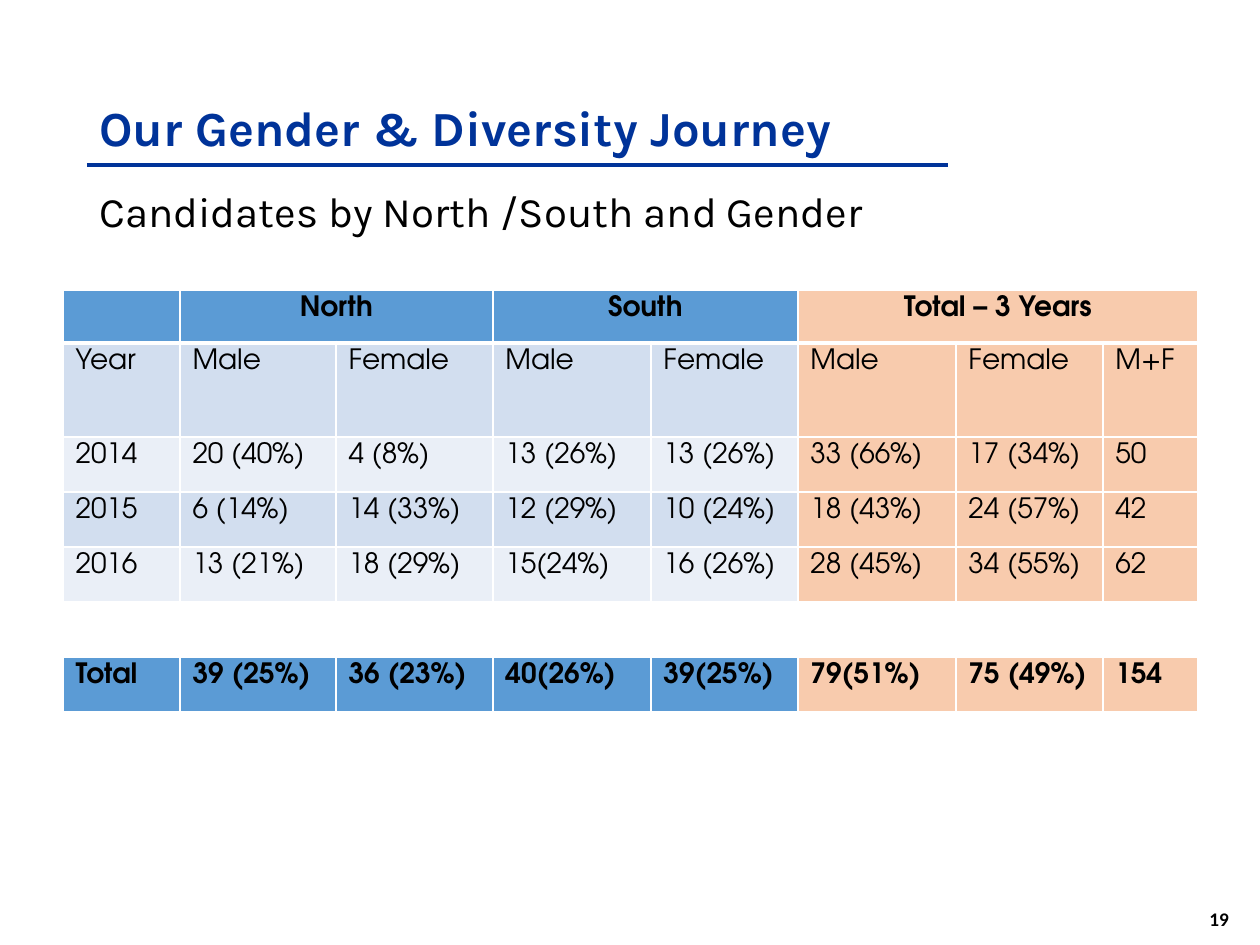
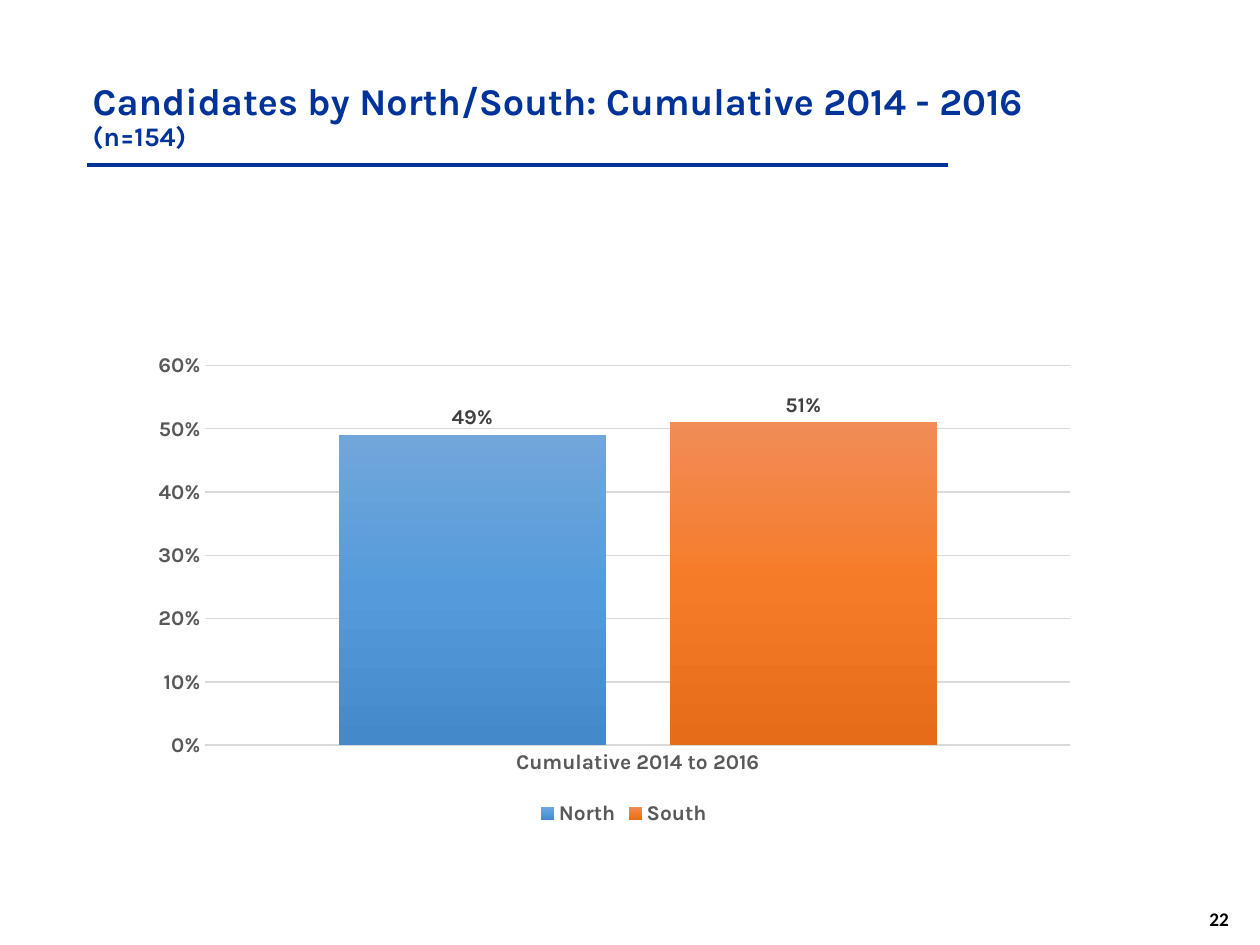
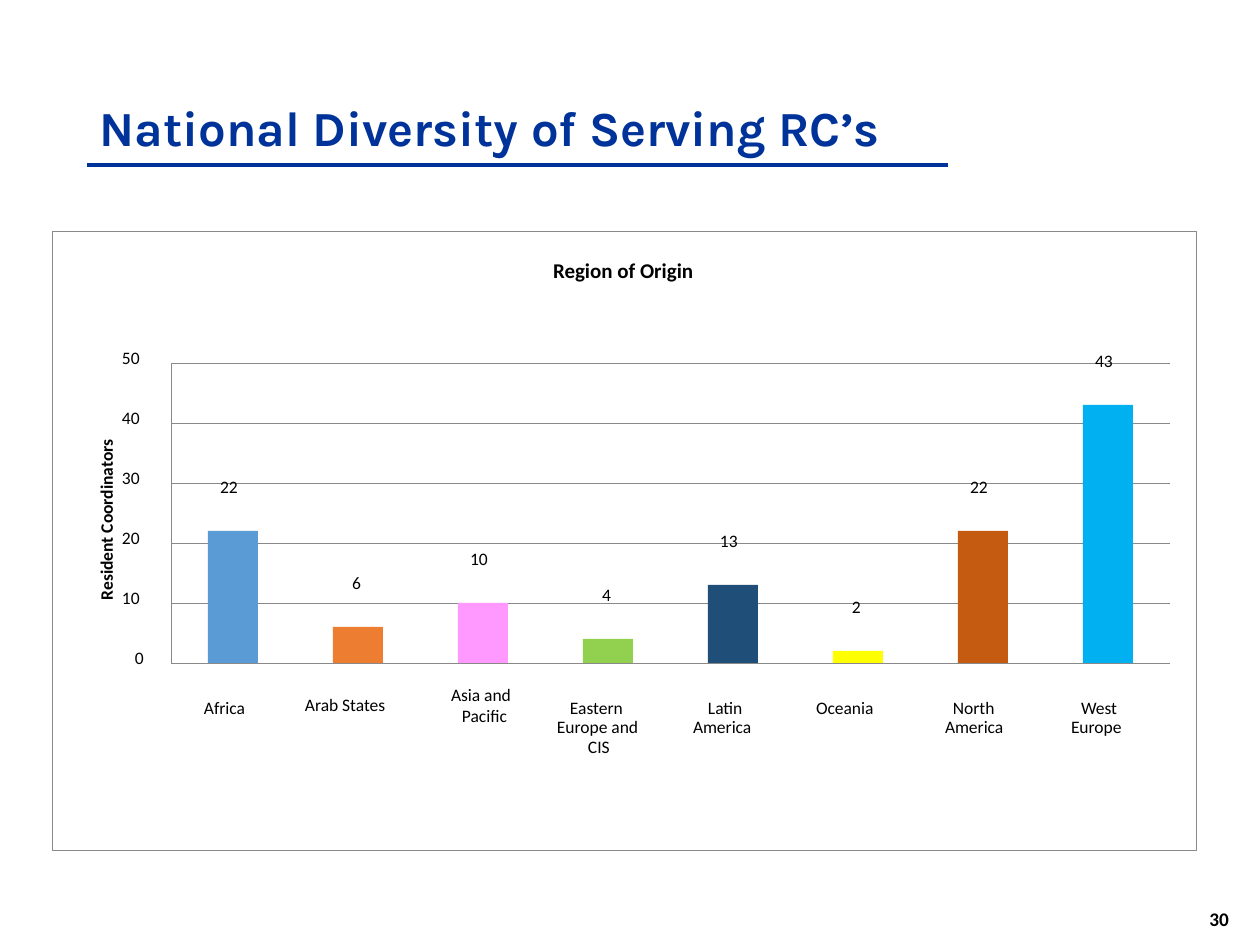
from lxml import etree
from pptx import Presentation
from pptx.chart.data import CategoryChartData
from pptx.dml.color import RGBColor
from pptx.enum.chart import XL_CHART_TYPE, XL_LABEL_POSITION, XL_LEGEND_POSITION, XL_TICK_MARK
from pptx.enum.shapes import MSO_CONNECTOR, MSO_SHAPE
from pptx.enum.text import MSO_ANCHOR, MSO_AUTO_SIZE, PP_ALIGN
from pptx.oxml import parse_xml
from pptx.oxml.ns import nsdecls, qn
from pptx.util import Pt

COLUMNS = XL_CHART_TYPE.COLUMN_CLUSTERED
OUTSIDE = XL_LABEL_POSITION.OUTSIDE_END
LEGEND_BOTTOM = XL_LEGEND_POSITION.BOTTOM
NO_TICK = XL_TICK_MARK.NONE
STRAIGHT, RECTANGLE = MSO_CONNECTOR.STRAIGHT, MSO_SHAPE.RECTANGLE
LEFT, CENTER = PP_ALIGN.LEFT, PP_ALIGN.CENTER
TOP, MIDDLE, BOTTOM = MSO_ANCHOR.TOP, MSO_ANCHOR.MIDDLE, MSO_ANCHOR.BOTTOM

PX_PER_INCH = 126
HEADING, TABLE_FONT, PLAIN = "Karla", "TeX Gyre Adventor", "Calibri"
COLORS = {
    "ink": "000000", "navy": "003399", "white": "FFFFFF",
    "blue": "5B9BD5", "band": "D2DEEF", "pale": "EAEFF7", "peach": "F8CBAD",
    "grid": "D9D9D9", "axis_text": "595959", "label": "404040", "gray": "898989",
    "orange": "ED7D31", "pink": "FF99FF", "green": "92D050", "dark_blue": "1F4E79",
    "yellow": "FFFF00", "rust": "C55A11", "sky": "00B0F0",
}
GRADIENTS = {"North": ("71A6DB", "559BDB", "448ACA"),
             "South": ("F18C57", "F67B28", "E56C19")}

# Candidate table
COLUMN_WIDTHS = [117, 156, 157, 158, 147, 158, 147, 95]
ROW_HEIGHTS = [53, 94] + [55] * 5
FIRST_TOTAL_COLUMN = 5
HEADER_GROUPS = [("North", 1, 2), ("South", 3, 4), ("Total – 3 Years", 5, 7)]
TABLE_ROWS = [
    ("blue", []),
    ("band", ["Year", "Male", "Female", "Male", "Female", "Male", "Female", "M+F"]),
    ("pale", ["2014", "20 (40%)", "4 (8%)", "13 (26%)", "13 (26%)",
              "33 (66%)", "17 (34%)", "50"]),
    ("band", ["2015", "6 (14%)", "14 (33%)", "12 (29%)", "10 (24%)",
              "18 (43%)", "24 (57%)", "42"]),
    ("pale", ["2016", "13 (21%)", "18 (29%)", "15(24%)", "16 (26%)",
              "28 (45%)", "34 (55%)", "62"]),
    ("white", []),
    ("blue", ["Total", "39 (25%)", "36 (23%)", "40(26%)", "39(25%)",
              "79(51%)", "75 (49%)", "154"]),
]
GAP_ROW = 5

# Region columns: coordinators, bar colour, name lines with their left and top
AXIS_LEFT, AXIS_RIGHT, BASELINE = 171, 1170, 663
UNIT, BAR_LEFT, BAR_STEP, BAR_WIDTH = 6, 208, 125, 50
LINE_1, LINE_2, LINE_3 = 696, 715, 735
REGIONS = [
    (22, "blue", [("Africa", 204, LINE_1)]),
    (6, "orange", [("Arab States", 305, 693)]),
    (10, "pink", [("Asia and", 451, 683), ("Pacific", 462, 704)]),
    (4, "green", [("Eastern", 570, LINE_1), ("Europe and", 557, LINE_2),
                  ("CIS", 588, LINE_3)]),
    (13, "dark_blue", [("Latin", 708, LINE_1), ("America", 693, LINE_2)]),
    (2, "yellow", [("Oceania", 816, LINE_1)]),
    (22, "rust", [("North", 953, LINE_1), ("America", 945, LINE_2)]),
    (43, "sky", [("West", 1081, LINE_1), ("Europe", 1071, LINE_2)]),
]


def px(length):
    return round(length * 914400 / PX_PER_INCH)


def rgb(name):
    return RGBColor.from_string(COLORS[name])


def style_font(font, name, size, color="ink", bold=False):
    font.name, font.size, font.bold = name, Pt(size), bold
    font.color.rgb = rgb(color)


def write(frame, text, font=HEADING, size=16, color="ink", bold=False,
          align=LEFT, spacing=None, small=None):
    """Write one paragraph; lines after the first take the small size."""
    para = frame.paragraphs[0]
    para.alignment = align
    if spacing:
        para.line_spacing = spacing
    for index, line in enumerate(text.split("\n")):
        if index:
            para.add_line_break()
        span = para.add_run()
        span.text = line
        style_font(span.font, font, small if index and small else size, color, bold)


def add_text(page, area, text, anchor=TOP, wrap=True, **style):
    box = page.shapes.add_textbox(*map(px, area))
    box.text_frame.word_wrap = wrap
    box.text_frame.vertical_anchor = anchor
    write(box.text_frame, text, **style)
    return box


def add_line(page, x1, y1, x2, y2, color, width):
    line = page.shapes.add_connector(STRAIGHT, px(x1), px(y1), px(x2), px(y2))
    line.line.color.rgb, line.line.width = rgb(color), Pt(width)
    etree.SubElement(line.element.spPr, qn("a:effectLst"))


def add_page(deck, title, number, area=(87, 51, 1086, 112), size=28, small=None):
    """Add a slide with its title, rule and page number."""
    page = deck.slides.add_slide(deck.slide_layouts[5])
    heading = page.shapes.title
    heading.left, heading.top, heading.width, heading.height = map(px, area)
    frame = heading.text_frame
    frame.word_wrap = True
    frame.auto_size = MSO_AUTO_SIZE.NONE
    frame.vertical_anchor = BOTTOM
    write(frame, title, size=size, color="navy", bold=True, spacing=0.9, small=small)
    add_line(page, 87, 165, 948, 165, "navy", 2)
    add_text(page, (1197, 901, 48, 37), number, wrap=False,
             font=PLAIN, size=11, bold=True)
    return page


# Table parts
def border_cell(cell, top=1, bottom=1):
    properties = cell._tc.get_or_add_tcPr()
    widths = {"lnL": 1, "lnR": 1, "lnT": top, "lnB": bottom}
    for index, (tag, width) in enumerate(widths.items()):
        properties.insert(index, parse_xml(
            f'<a:{tag} {nsdecls("a")} w="{Pt(width)}"><a:solidFill>'
            f'<a:srgbClr val="{COLORS["white"]}"/></a:solidFill></a:{tag}>'))


def add_candidate_table(page):
    table = page.shapes.add_table(len(ROW_HEIGHTS), len(COLUMN_WIDTHS), px(63), px(290),
                                  px(sum(COLUMN_WIDTHS)), px(sum(ROW_HEIGHTS))).table
    table.first_row = table.horz_banding = False
    for column, width in zip(table.columns, COLUMN_WIDTHS):
        column.width = px(width)
    for row, height in zip(table.rows, ROW_HEIGHTS):
        row.height = px(height)
    for row, (fill, texts) in enumerate(TABLE_ROWS):
        for column in range(len(COLUMN_WIDTHS)):
            cell = table.cell(row, column)
            in_total = column >= FIRST_TOTAL_COLUMN and row != GAP_ROW
            cell.fill.solid()
            cell.fill.fore_color.rgb = rgb("peach" if in_total else fill)
            border_cell(cell, top=3 if row == 1 else 1, bottom=3 if row == 0 else 1)
            if texts:
                write(cell.text_frame, texts[column], font=TABLE_FONT, bold=fill == "blue")
    for text, first, last in HEADER_GROUPS:
        table.cell(0, first).merge(table.cell(0, last))
        write(table.cell(0, first).text_frame, text, font=TABLE_FONT,
              bold=True, align=CENTER)
    table.cell(GAP_ROW, 0).merge(table.cell(GAP_ROW, len(COLUMN_WIDTHS) - 1))


# Share chart
def set_plot_layout(chart, **fractions):
    area = chart.element.find(".//" + qn("c:plotArea"))
    for old in area.findall(qn("c:layout")):
        area.remove(old)
    values = dict(layoutTarget="inner", xMode="edge", yMode="edge", **fractions)
    items = "".join(f'<c:{tag} val="{value}"/>' for tag, value in values.items())
    area.insert(0, parse_xml(f'<c:layout {nsdecls("c")}><c:manualLayout>{items}'
                             '</c:manualLayout></c:layout>'))


def fill_gradient(series, stops):
    series.format.fill.background()
    blank = series._element.spPr.find(qn("a:noFill"))
    items = "".join(f'<a:gs pos="{index * 50000}"><a:srgbClr val="{stop}"/></a:gs>'
                    for index, stop in enumerate(stops))
    blank.getparent().replace(blank, parse_xml(
        f'<a:gradFill {nsdecls("a")}><a:gsLst>{items}</a:gsLst>'
        '<a:lin ang="5400000" scaled="0"/></a:gradFill>'))


def add_share_chart(page):
    data = CategoryChartData(number_format="0%")
    data.categories = ["Cumulative 2014 to 2016"]
    data.add_series("North", [0.49])
    data.add_series("South", [0.51])
    chart = page.shapes.add_chart(COLUMNS, px(158), px(296), px(931), px(535), data).chart
    style_font(chart.font, HEADING, 10)
    chart.has_title = False
    chart.element.find(qn("c:chart")).addnext(parse_xml(
        f'<c:spPr {nsdecls("c", "a")}><a:noFill/><a:ln><a:noFill/></a:ln></c:spPr>'))
    set_plot_layout(chart, x=0.05, y=0.13, w=0.93, h=0.71)

    values, categories = chart.value_axis, chart.category_axis
    values.minimum_scale, values.maximum_scale, values.major_unit = 0, 0.6, 0.1
    values.tick_labels.number_format = "0%"
    values.tick_labels.number_format_is_linked = False
    values.format.line.fill.background()
    for line, width in ((values.major_gridlines.format.line, 0.75),
                        (categories.format.line, 1)):
        line.color.rgb, line.width = rgb("grid"), Pt(width)
    for axis in (values, categories):
        axis.major_tick_mark = axis.minor_tick_mark = NO_TICK
        style_font(axis.tick_labels.font, HEADING, 12, "axis_text", True)

    chart.has_legend = True
    chart.legend.position = LEGEND_BOTTOM
    chart.legend.include_in_layout = False
    style_font(chart.legend.font, HEADING, 12, "axis_text", True)

    plot = chart.plots[0]
    plot.gap_width, plot.overlap, plot.vary_by_categories = 100, -24, False
    for series in plot.series:
        fill_gradient(series, GRADIENTS[series.name])
        labels = series.data_labels
        labels.show_value, labels.position = True, OUTSIDE
        labels.number_format, labels.number_format_is_linked = "0%", False
        style_font(labels.font, HEADING, 12, "label", True)


# Region diagram
def add_block(page, area, fill=None, line=None):
    block = page.shapes.add_shape(RECTANGLE, *map(px, area))
    block.shadow.inherit = False
    if fill:
        block.fill.solid()
        block.fill.fore_color.rgb = rgb(fill)
    else:
        block.fill.background()
    if line:
        block.line.color.rgb, block.line.width = rgb(line), Pt(0.5)
    else:
        block.line.fill.background()


def add_label(page, text, left, top, width=120, height=52, size=10, bold=False):
    box = add_text(page, (left, top, width, height), text, font=PLAIN,
                   size=size, bold=bold, spacing=1.07)
    frame = box.text_frame
    frame.margin_left = frame.margin_top = frame.margin_right = frame.margin_bottom = 0
    return box


def add_number(page, number, left, top):
    """Label with a number; one digit stands half a number further right."""
    add_label(page, str(number), left + (7 if number < 10 else 0), top, width=34)


def add_region_diagram(page):
    for value in range(10, 51, 10):
        level = BASELINE - value * UNIT
        add_line(page, AXIS_LEFT, level, AXIS_RIGHT, level, "gray", 0.48)
    for index, (count, color, _) in enumerate(REGIONS):
        height = count * UNIT
        add_block(page, (BAR_LEFT + index * BAR_STEP, BASELINE - height, BAR_WIDTH, height),
                  fill=color)
    add_line(page, AXIS_LEFT, BASELINE, AXIS_LEFT, BASELINE - 50 * UNIT, "gray", 0.48)
    add_line(page, AXIS_LEFT, BASELINE, AXIS_RIGHT, BASELINE, "gray", 0.48)

    for index, (count, _, _) in enumerate(REGIONS):
        add_number(page, count, BAR_LEFT + index * BAR_STEP + 12,
                   BASELINE - count * UNIT - 56)
    for value in range(0, 51, 10):
        add_number(page, value, 122 if value else 128, BASELINE - value * UNIT - 17)
    for _, _, lines in REGIONS:
        for text, left, top in lines:
            add_label(page, text, left, top)

    axis_name = add_label(page, "Resident Coordinators", 11, 483, 200, 34, bold=True)
    axis_name.rotation = 270
    add_label(page, "Region of Origin", 553, 256, 184, 62, size=12, bold=True)
    add_block(page, (53, 231, 1144, 620), line="gray")


def main():
    deck = Presentation()
    deck.slide_width, deck.slide_height = px(1260), px(945)

    page = add_page(deck, "Our Gender & Diversity Journey", "19")
    add_candidate_table(page)
    add_text(page, (87, 158, 1086, 112), "Candidates by North /South and Gender",
             anchor=MIDDLE, size=24, spacing=0.9)

    page = add_page(deck, "Candidates by North/South: Cumulative 2014 - 2016\n(n=154)", "22",
                    area=(80, 73, 1086, 86), size=21.6, small=15.3)
    add_share_chart(page)

    page = add_page(deck, "National Diversity of Serving RC’s", "30")
    add_region_diagram(page)

    deck.save("out.pptx")


if __name__ == "__main__":
    main()
